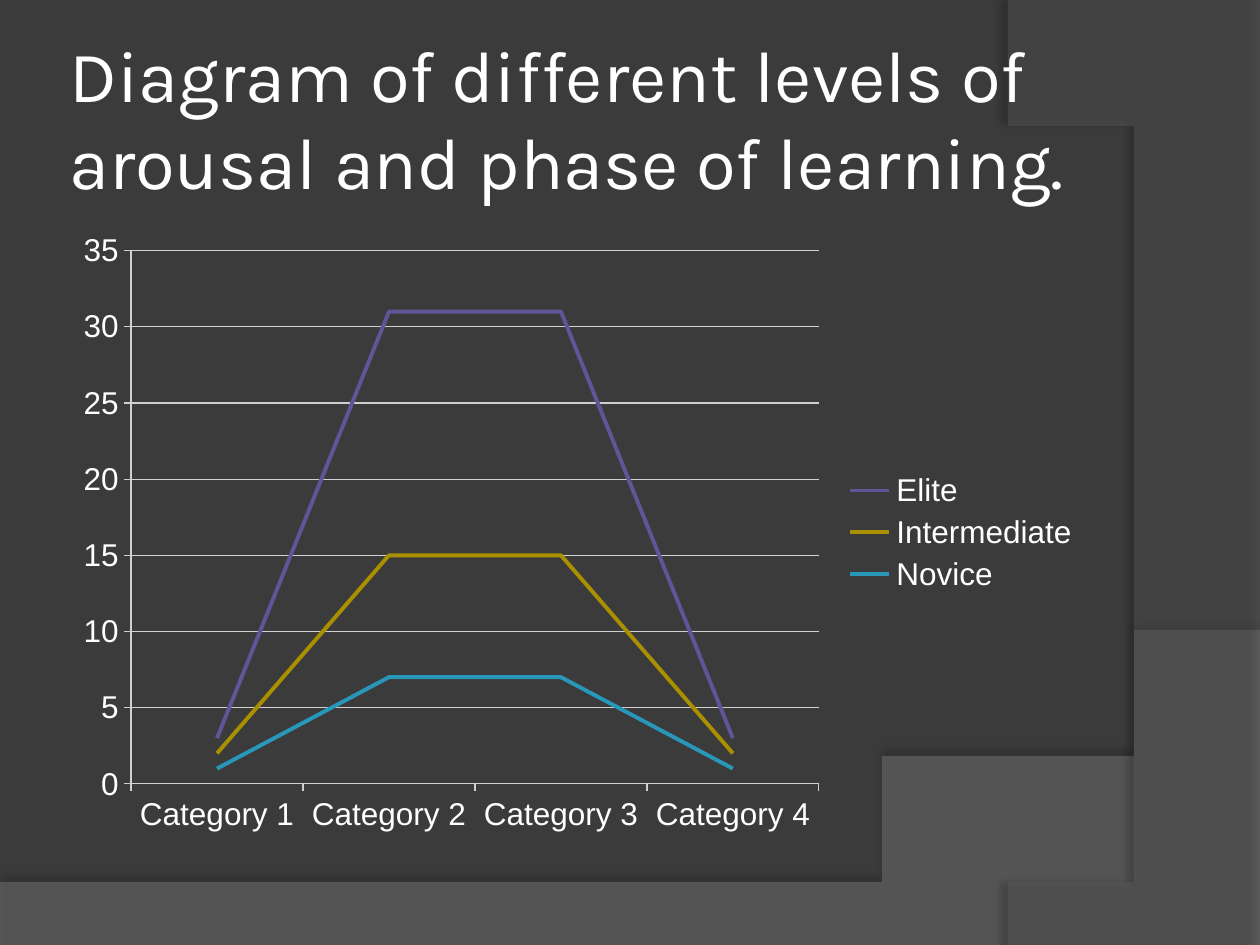
from lxml import etree
from pptx import Presentation
from pptx.chart.data import CategoryChartData as ChartData
from pptx.dml.color import RGBColor
from pptx.enum.chart import XL_CHART_TYPE as Kind, XL_LEGEND_POSITION as Legend
from pptx.enum.chart import XL_MARKER_STYLE as Marker, XL_TICK_MARK as Tick
from pptx.enum.text import MSO_ANCHOR as Anchor
from pptx.oxml import parse_xml
from pptx.oxml.ns import nsdecls, qn
from pptx.util import Inches, Pt

WHITE, GRID = "FFFFFF", "D0D0D0"
CATS = [f"Category {n}" for n in range(1, 5)]
SERIES = [
    ("Novice", (1, 7, 7, 1), "6EA0B0"),
    ("Intermediate", (1, 8, 8, 1), "CCAF0A"),
    ("Elite", (1, 16, 16, 1), "8D89A4"),
]


def rgb(code):
    return RGBColor.from_string(code)


def tune(fill, **mods):
    """Add colour modifiers, in percent, to a solid fill element."""
    for name, value in mods.items():
        etree.SubElement(fill.find(qn("a:srgbClr")), qn(f"a:{name}"), val=str(value * 1000))


def curve(start, c1, c2, end, steps=48):
    """Points along a cubic curve."""
    pts = []
    for i in range(steps + 1):
        t = i / steps
        u = 1 - t
        pts.append(tuple(u**3 * a + 3 * u * u * t * b + 3 * u * t * t * c + t**3 * d
                         for a, b, c, d in zip(start, c1, c2, end)))
    return pts


def add_wave(slide, pts, color, alpha, shade, dist, angle):
    """Translucent outline with a soft shadow."""
    pen = slide.shapes.build_freeform(*pts[0], scale=Inches(1))
    pen.add_line_segments(pts[1:], close=True)
    wave = pen.convert_to_shape()
    wave.fill.solid()
    wave.fill.fore_color.rgb = rgb(color)
    wave.line.fill.background()
    props = wave.element.spPr
    tune(props.find(qn("a:solidFill")), alpha=alpha)
    props.append(parse_xml(
        f'<a:effectLst {nsdecls("a")}><a:outerShdw blurRad="{Pt(4)}" dist="{Pt(dist)}" '
        f'dir="{angle * 60000}" algn="tl" rotWithShape="0"><a:srgbClr val="000000">'
        f'<a:alpha val="{shade * 1000}"/></a:srgbClr></a:outerShdw></a:effectLst>'))


def style(font, size, name, color):
    font.size, font.name = Pt(size), name
    font.color.rgb = rgb(color)


def add_text(slide, text, box, size=18, name="Arial", color=WHITE, anchor=Anchor.MIDDLE):
    frame = slide.shapes.add_textbox(*map(Inches, box)).text_frame
    frame.word_wrap = True
    frame.vertical_anchor = anchor
    frame.margin_left = frame.margin_right = Inches(0.05)
    frame.margin_top = frame.margin_bottom = Inches(0.05)
    run = frame.paragraphs[0].add_run()
    run.text = text
    style(run.font, size, name, color)


def draw(line, color, width):
    line.color.rgb = rgb(color)
    line.width = Pt(width)


def add_lines(slide, box):
    """Stacked line chart with its legend on the right."""
    data = ChartData()
    data.categories = CATS
    for name, vals, _ in SERIES:
        data.add_series(name, vals)
    chart = slide.shapes.add_chart(Kind.LINE_STACKED, *map(Inches, box), data).chart
    style(chart.font, 18, "Arial", WHITE)
    chart.has_title = False
    chart.has_legend = True
    chart.legend.position = Legend.RIGHT
    chart.legend.include_in_layout = False

    # Axes and grid
    for axis in (chart.category_axis, chart.value_axis):
        axis.major_tick_mark, axis.minor_tick_mark = Tick.OUTSIDE, Tick.NONE
        draw(axis.format.line, GRID, 0.75)
    scale = chart.value_axis
    scale.minimum_scale, scale.maximum_scale, scale.major_unit = 0, 35, 5
    scale.has_major_gridlines = True
    draw(scale.major_gridlines.format.line, GRID, 0.75)

    # Series lines, deepened from their base colours
    plot = chart.plots[0]
    plot.vary_by_categories = False
    for line, (_, _, color) in zip(plot.series, SERIES):
        line.smooth = False
        line.marker.style = Marker.NONE
        draw(line.format.line, color, 2.25)
        fill = line.format.line.fill._xPr.find(qn("a:solidFill"))
        tune(fill, satMod=220, lumMod=79)


def main():
    prs = Presentation()
    prs.slide_width, prs.slide_height = Inches(10), Inches(7.5)
    slide = prs.slides.add_slide(prs.slide_layouts[6])
    slide.background.fill.solid()
    slide.background.fill.fore_color.rgb = rgb("3B3B3B")

    # Backdrop waves
    low = curve((10, 5.2), (5.59, 7.29), (3.91, 7.19), (0, 7.05))
    add_wave(slide, [(0, 7.51), (10, 7.51)] + low, "7F7F7F", 45, 35, 3.5, 270)
    side = curve((8.21, 7.5), (9.35, 6.19), (10.18, 3), (8, 0))
    add_wave(slide, [(10, 0.02), (10, 7.5)] + side, "5E5E5E", 40, 45, 4, 180)

    # Title and chart
    add_text(slide, "Diagram of different levels of arousal and phase of learning.",
             (0.5, 0.3, 8.17, 1.25), size=41.4, name="Karla")
    add_lines(slide, (0.5, 1.75, 8.17, 4.95))
    prs.save("out.pptx")


if __name__ == "__main__":
    main()
